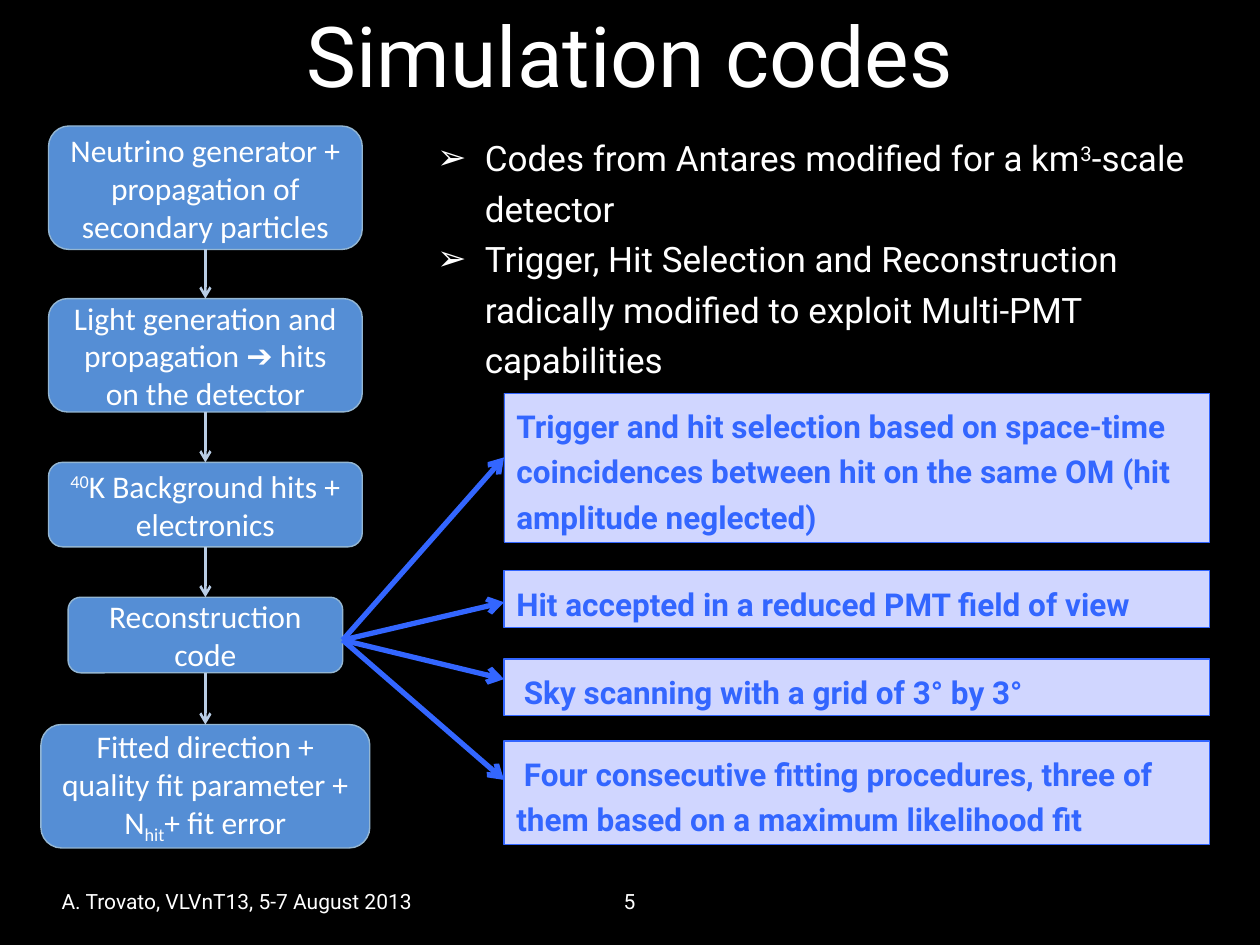
from lxml import etree
from pptx import Presentation
from pptx.dml.color import RGBColor
from pptx.enum.shapes import MSO_CONNECTOR, MSO_SHAPE
from pptx.enum.text import MSO_ANCHOR, PP_ALIGN
from pptx.oxml.ns import qn
from pptx.util import Inches, Pt

STRAIGHT = MSO_CONNECTOR.STRAIGHT
RECTANGLE, ROUNDED = MSO_SHAPE.RECTANGLE, MSO_SHAPE.ROUNDED_RECTANGLE
TOP, MIDDLE = MSO_ANCHOR.TOP, MSO_ANCHOR.MIDDLE
LEFT, CENTER = PP_ALIGN.LEFT, PP_ALIGN.CENTER
SIDE_TOP, SIDE_BOTTOM = 0, 2

THEME = {
    "background": "000000",
    "title": {"name": "Roboto", "size": Pt(48), "color": "FFFFFF"},
    "body": {"name": "Roboto", "size": Pt(20), "color": "FFFFFF"},
    "footer": {"name": "Roboto", "size": Pt(12), "color": "FFFFFF"},
    "stage": {"name": "Calibri", "size": Pt(18), "color": "FFFFFF"},
    "detail": {"name": "Roboto", "size": Pt(18), "color": "3366FF", "bold": True},
    "stage_box": {"fill": "558ED5", "line": "94B6D2", "width": 0.79},
    "detail_box": {"fill": "D0D6FF", "line": "3366FF"},
    "flow_arrow": {"line": "B9CDE5", "width": 1.5},
    "detail_arrow": {"line": "3366FF", "width": 3},
}

TITLE = "Simulation codes"
FOOTER = "A. Trovato, VLVnT13, 5-7 August 2013"
PAGE_NUMBER = "5"
BULLETS = [
    [("Codes from Antares modified for a km", {}), ("3", {"baseline": 30}), ("-scale detector", {})],
    [("Trigger, Hit Selection and Reconstruction radically modified "
      "to exploit Multi-PMT capabilities", {})],
]
STAGE_CENTER = 1.63
STAGES = [
    (1, 2.49, 0.98, [("Neutrino generator + propagation of secondary particles", {})]),
    (2.37, 2.49, 0.9, [("Light generation and propagation ", {}), ("➔", {"name": "Arial"}),
                       (" hits on the detector", {})]),
    (3.67, 2.49, 0.67, [("40", {"baseline": 30}), ("K Background hits + electronics", {})]),
    (4.74, 2.18, 0.6, [("Reconstruction code", {})]),
    (5.75, 2.61, 0.98, [("Fitted direction + quality fit parameter + N", {}),
                        ("hit", {"baseline": -25}), ("+ fit error", {})]),
]
DETAIL_LEFT, DETAIL_WIDTH = 4, 5.6
DETAIL_START = (2.72, 5.08)
DETAILS = [
    (3.12, 1.18, 0.25, 0, 3.63, "Trigger and hit selection based on space-time coincidences "
     "between hit on the same OM (hit amplitude neglected)"),
    (4.53, 0.45, 0.75, 0, 4.78, "Hit accepted in a reduced PMT field of view"),
    (5.23, 0.45, 0.75, 0.06, 5.39, "Sky scanning with a grid of 3° by 3°"),
    (5.88, 0.82, 0.75, 0.06, 6.19, "Four consecutive fitting procedures, three of them "
     "based on a maximum likelihood fit"),
]


def set_line(line, color, width):
    line.color.rgb = RGBColor.from_string(color)
    line.width = Pt(width)


def add_runs(paragraph, runs, style):
    for text, changes in runs:
        run = paragraph.add_run()
        run.text = text
        for key, value in {**style, **changes}.items():
            if key == "color":
                run.font.color.rgb = RGBColor.from_string(value)
            elif key == "baseline":
                run._r.get_or_add_rPr().set("baseline", str(value * 1000))
            else:
                setattr(run.font, key, value)


def write(shape, paragraphs, style, anchor=MIDDLE, align=CENTER, spacing=None,
          margin=0, indent=0, bullet=None):
    frame = shape.text_frame
    frame.word_wrap = True
    frame.vertical_anchor = anchor
    for index, runs in enumerate(paragraphs):
        paragraph = frame.add_paragraph() if index else frame.paragraphs[0]
        properties = paragraph._p.get_or_add_pPr()
        properties.set("marL", str(Inches(margin)))
        properties.set("indent", str(Inches(indent)))
        if bullet:
            etree.SubElement(properties, qn("a:buFont"), typeface="Arial")
            etree.SubElement(properties, qn("a:buChar"), char=bullet)
        paragraph.alignment = align
        if spacing:
            paragraph.line_spacing = spacing
        add_runs(paragraph, runs, style)


def add_text(slide, bounds, paragraphs, style, **layout):
    shape = slide.shapes.add_textbox(*map(Inches, bounds))
    write(shape, paragraphs, style, **layout)


def add_box(slide, kind, bounds, fill, line, width):
    shape = slide.shapes.add_shape(kind, *map(Inches, bounds))
    shape.shadow.inherit = False
    shape.fill.solid()
    shape.fill.fore_color.rgb = RGBColor.from_string(fill)
    set_line(shape.line, line, width)
    return shape


def add_arrow(slide, start, end, line, width):
    connector = slide.shapes.add_connector(STRAIGHT, *map(Inches, (*start, *end)))
    set_line(connector.line, line, width)
    etree.SubElement(connector.line._get_or_add_ln(), qn("a:tailEnd"), type="arrow")
    etree.SubElement(connector._element.spPr, qn("a:effectLst"))
    return connector


def add_stages(slide):
    previous = None
    for top, width, height, runs in STAGES:
        bounds = (STAGE_CENTER - width / 2, top, width, height)
        stage = add_box(slide, ROUNDED, bounds, **THEME["stage_box"])
        write(stage, [runs], THEME["stage"])
        if previous:
            arrow = add_arrow(slide, (STAGE_CENTER, top), (STAGE_CENTER, top),
                              **THEME["flow_arrow"])
            arrow.begin_connect(previous, SIDE_BOTTOM)
            arrow.end_connect(stage, SIDE_TOP)
        previous = stage


def add_details(slide):
    for top, height, border, indent, target, text in DETAILS:
        bounds = (DETAIL_LEFT, top, DETAIL_WIDTH, height)
        box = add_box(slide, RECTANGLE, bounds, width=border, **THEME["detail_box"])
        write(box, [[(text, {})]], THEME["detail"], anchor=TOP, align=LEFT,
              spacing=1.2, indent=indent)
    for top, height, border, indent, target, text in DETAILS:
        add_arrow(slide, DETAIL_START, (DETAIL_LEFT, target), **THEME["detail_arrow"])


def main():
    presentation = Presentation()
    presentation.slide_width, presentation.slide_height = Inches(10), Inches(7.5)
    slide = presentation.slides.add_slide(presentation.slide_layouts[6])
    slide.background.fill.solid()
    slide.background.fill.fore_color.rgb = RGBColor.from_string(THEME["background"])
    add_text(slide, (0.75, -0.35, 8.5, 1.56), [[(TITLE, {})]], THEME["title"])
    add_stages(slide)
    add_text(slide, (3.37, 0.97, 6.39, 2.11), BULLETS, THEME["body"], anchor=TOP,
             align=LEFT, spacing=1.2, margin=0.38, indent=-0.38, bullet="➢")
    add_details(slide)
    add_text(slide, (0.39, 6.95, 3.61, 0.4), [[(FOOTER, {})]], THEME["footer"], align=LEFT)
    add_text(slide, (4.62, 6.95, 0.75, 0.4), [[(PAGE_NUMBER, {})]], THEME["footer"])
    presentation.save("out.pptx")


if __name__ == "__main__":
    main()
